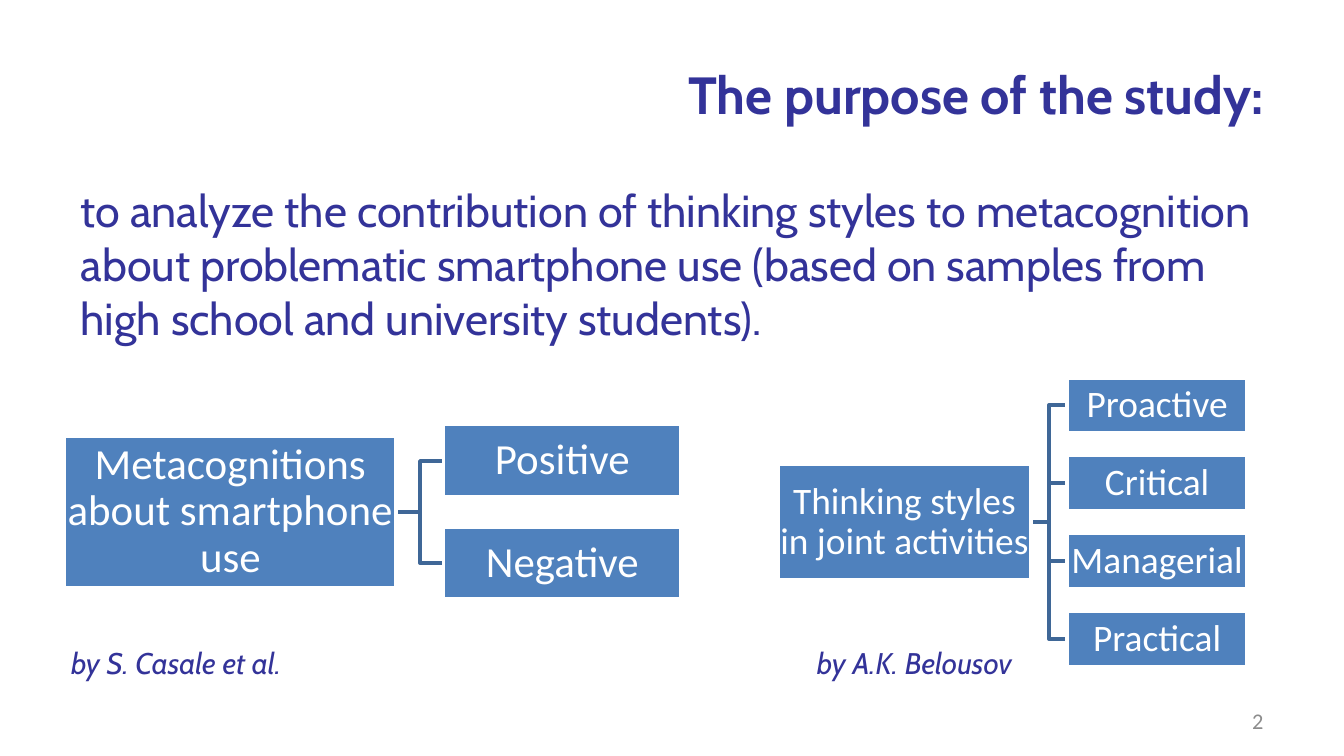
from dataclasses import dataclass

from lxml.etree import SubElement
from pptx import Presentation
from pptx.dml.color import RGBColor
from pptx.enum.shapes import MSO_SHAPE
from pptx.enum.text import MSO_ANCHOR, MSO_AUTO_SIZE, PP_ALIGN
from pptx.oxml.ns import qn
from pptx.util import Inches, Pt

# The slide is a grid of square cells, 100 columns wide
CELL = Inches(0.1)


@dataclass(frozen=True)
class Theme:
    text_font: str = "Cabin"
    box_font: str = "Calibri"
    ink: RGBColor = RGBColor(0x33, 0x33, 0x99)
    box_fill: RGBColor = RGBColor(0x4F, 0x81, 0xBD)
    branch: RGBColor = RGBColor(0x3F, 0x67, 0x97)
    white: RGBColor = RGBColor(0xFF, 0xFF, 0xFF)
    muted: RGBColor = RGBColor(0x8C, 0x8C, 0x8C)
    title_size: int = 28
    body_size: int = 24
    caption_size: int = 16
    number_size: int = 12
    line_width: int = 2


@dataclass(frozen=True)
class Tree:
    root: str
    leaves: tuple
    root_left: float
    root_width: float
    root_height: float
    leaf_left: float
    leaf_top: float
    leaf_width: float
    leaf_height: float
    leaf_step: float
    text_size: int
    inset: float


THEME = Theme()

METACOGNITIONS = Tree(
    "Metacognitions about smartphone use", ("Positive", "Negative"),
    root_left=4.8, root_width=24.7, root_height=11.3,
    leaf_left=33, leaf_top=31.6, leaf_width=17.7, leaf_height=5.4, leaf_step=7.6,
    text_size=23, inset=0.2)
THINKING_STYLES = Tree(
    "Thinking styles in joint activities",
    ("Proactive", "Critical", "Managerial", "Practical"),
    root_left=57.9, root_width=18.8, root_height=8.6,
    leaf_left=79.4, leaf_top=28.1, leaf_width=13.4, leaf_height=4.1, leaf_step=5.8,
    text_size=20, inset=0.1)


def cells(*counts):
    return [int(count * CELL) for count in counts]


def place(shape, left, top, width, height):
    shape.left, shape.top, shape.width, shape.height = cells(left, top, width, height)


def write(shape, text, font_name, size, color, align=PP_ALIGN.LEFT,
          anchor=MSO_ANCHOR.TOP, bold=False, italic=False):
    frame = shape.text_frame
    frame.text = text
    frame.word_wrap = True
    frame.auto_size = MSO_AUTO_SIZE.NONE
    frame.vertical_anchor = anchor
    paragraph = frame.paragraphs[0]
    paragraph.alignment = align
    for run in paragraph.runs:
        font = run.font
        font.name, font.size, font.color.rgb = font_name, Pt(size), color
        font.bold, font.italic = bold, italic
    return paragraph


def add_box(group, text, left, top, width, height, size, inset):
    box = group.shapes.add_shape(MSO_SHAPE.RECTANGLE, *cells(left, top, width, height))
    box.shadow.inherit = False
    box.fill.solid()
    box.fill.fore_color.rgb = THEME.box_fill
    box.line.color.rgb = THEME.white
    box.line.width = Pt(THEME.line_width)
    paragraph = write(box, text, THEME.box_font, size, THEME.white,
                      PP_ALIGN.CENTER, MSO_ANCHOR.MIDDLE)
    paragraph.line_spacing = 0.9
    frame = box.text_frame
    frame.margin_left = frame.margin_right = int(inset * CELL)
    frame.margin_top = frame.margin_bottom = int(inset * CELL)


def add_branch(group, start_x, start_y, end_x, end_y):
    middle_x = (start_x + end_x) / 2
    builder = group.shapes.build_freeform(*cells(start_x, start_y))
    points = [(middle_x, start_y), (middle_x, end_y), (end_x, end_y)]
    builder.add_line_segments([cells(*point) for point in points], close=False)
    branch = builder.convert_to_shape()
    branch.shadow.inherit = False
    branch.fill.background()
    branch.line.color.rgb = THEME.branch
    branch.line.width = Pt(THEME.line_width)


def add_tree(slide, tree):
    group = slide.shapes.add_group_shape()
    tops = [tree.leaf_top + index * tree.leaf_step for index in range(len(tree.leaves))]
    center = (tops[0] + tops[-1] + tree.leaf_height) / 2
    # Branches lie behind the boxes
    for top in tops:
        add_branch(group, tree.root_left + tree.root_width, center,
                   tree.leaf_left, top + tree.leaf_height / 2)
    add_box(group, tree.root, tree.root_left, center - tree.root_height / 2,
            tree.root_width, tree.root_height, tree.text_size, tree.inset)
    for text, top in zip(tree.leaves, tops):
        add_box(group, text, tree.leaf_left, top, tree.leaf_width,
                tree.leaf_height, tree.text_size, tree.inset)


def add_title(slide):
    title = slide.shapes.title
    place(title, 5, 2.3, 90, 9.4)
    write(title, "The purpose of the study:", THEME.text_font, THEME.title_size,
          THEME.ink, PP_ALIGN.RIGHT, MSO_ANCHOR.MIDDLE, bold=True)


def add_purpose(slide):
    body = slide.placeholders[1]
    place(body, 5, 13.1, 90, 37.1)
    paragraph = write(
        body,
        "to analyze the contribution of thinking styles to metacognition about "
        "problematic smartphone use (based on samples from high school and "
        "university students).",
        THEME.text_font, THEME.body_size, THEME.ink)
    paragraph.space_before = Pt(0)
    properties = paragraph._p.get_or_add_pPr()
    properties.set("marL", "0")
    properties.set("indent", "0")
    SubElement(properties, qn("a:buNone"))


def add_sources(slide):
    caption = slide.shapes.add_textbox(*cells(4.3, 47.5, 73.2, 3.7))
    paragraph = write(caption, "by S. Casale et al.\tby A.K. Belousov",
                      THEME.text_font, THEME.caption_size, THEME.ink, italic=True)
    # A tab stop sets the second source under its tree
    tabs = SubElement(paragraph._p.get_or_add_pPr(), qn("a:tabLst"))
    SubElement(tabs, qn("a:tab"), pos=str(int(55.5 * CELL)), algn="l")


def add_slide_number(slide):
    number = slide.shapes.add_textbox(*cells(71.7, 52.1, 23.3, 3))
    write(number, "2", THEME.box_font, THEME.number_size, THEME.muted,
          PP_ALIGN.RIGHT, MSO_ANCHOR.MIDDLE)


def main():
    presentation = Presentation()
    presentation.slide_width, presentation.slide_height = cells(100, 56.25)
    slide = presentation.slides.add_slide(presentation.slide_layouts[1])
    add_title(slide)
    add_purpose(slide)
    add_slide_number(slide)
    for tree in (THINKING_STYLES, METACOGNITIONS):
        add_tree(slide, tree)
    add_sources(slide)
    presentation.save("out.pptx")


if __name__ == "__main__":
    main()
